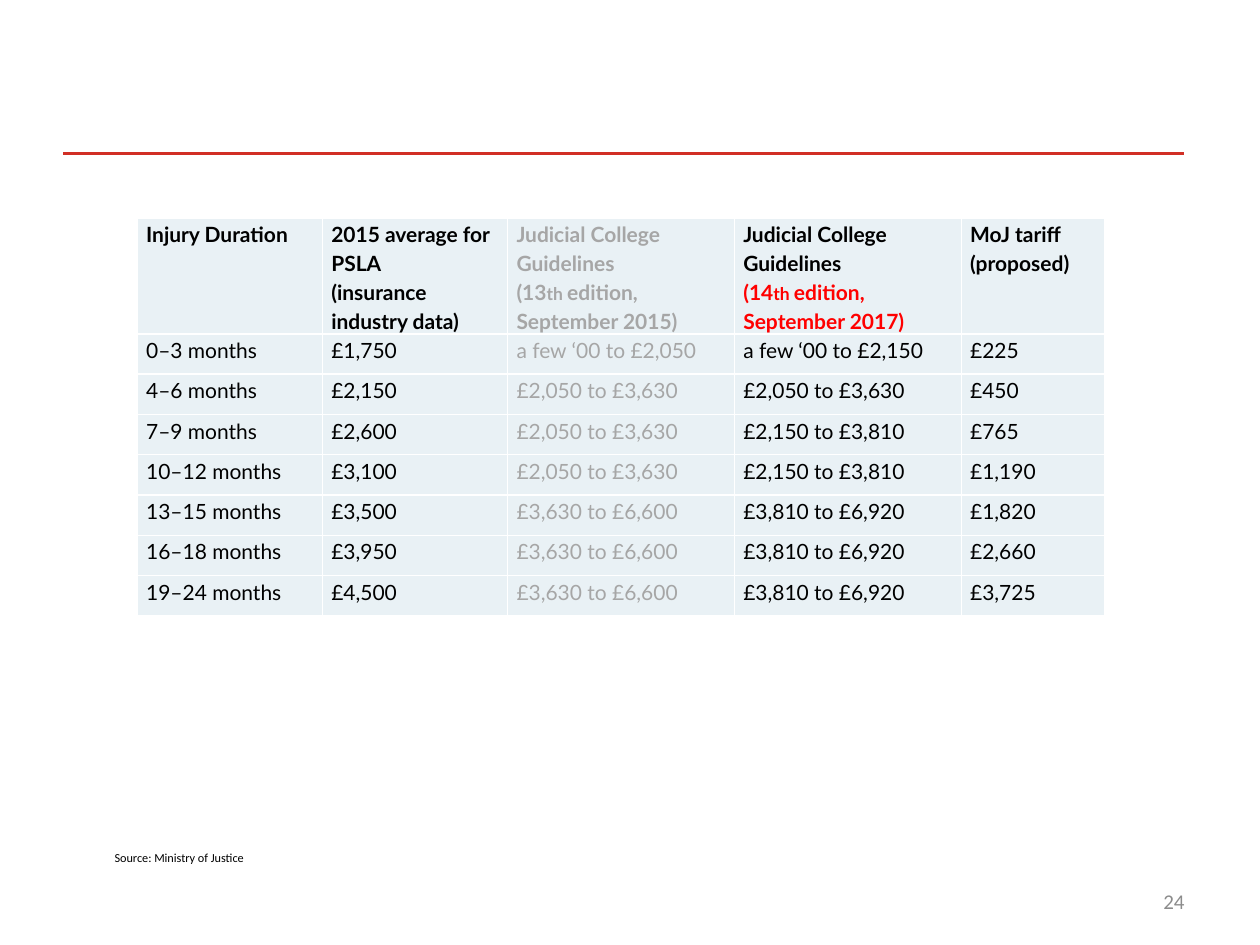
"""Build a slide comparing injury compensation by duration."""
from lxml.etree import SubElement
from pptx import Presentation
from pptx.dml.color import RGBColor
from pptx.enum.shapes import MSO_CONNECTOR
from pptx.enum.text import MSO_ANCHOR, PP_ALIGN
from pptx.oxml.ns import qn
from pptx.util import Inches, Pt

BLACK, GREY, RED = "000000", "A6A6A6", "FF0000"


def rgb(value):
    return RGBColor.from_string(value)


def add_run(p, text, color, **formats):
    r = p.add_run()
    r.text = text
    r.font.color.rgb = rgb(color)
    for name, value in formats.items():
        setattr(r.font, name, value)


prs = Presentation()
prs.slide_width, prs.slide_height = Inches(10), Inches(7.5)
s = prs.slides.add_slide(prs.slide_layouts[6])

rule = s.shapes.add_connector(
    MSO_CONNECTOR.STRAIGHT, Inches(0.5), Inches(1.22), Inches(9.4), Inches(1.22)
)
rule.line.color.rgb = rgb("D12F25")
rule.line.width = Pt(2)
SubElement(rule._element.spPr, qn("a:effectLst"))

sp = s.shapes.add_textbox(Inches(7.17), Inches(6.95), Inches(2.33), Inches(0.4))
tf = sp.text_frame
tf.word_wrap = True
tf.vertical_anchor = MSO_ANCHOR.MIDDLE
p = tf.paragraphs[0]
p.alignment = PP_ALIGN.RIGHT
add_run(p, "24", "8C8C8C", size=Pt(12), name="Calibri")

headers = [
    [["Injury Duration"]],
    [["2015 average for PSLA"], ["(insurance industry data)"]],
    [["Judicial College Guidelines"], ["(13", "th ", "edition, September 2015)"]],
    [["Judicial College Guidelines"], ["(14", "th ", "edition, September 2017)"]],
    [["MoJ tariff"], ["(proposed)"]],
]
data = [
    ["0–3 months", "£1,750", "a few ‘00 to £2,050", "a few ‘00 to £2,150", "£225"],
    ["4–6 months", "£2,150", "£2,050 to £3,630", "£2,050 to £3,630", "£450"],
    ["7–9 months", "£2,600", "£2,050 to £3,630", "£2,150 to £3,810", "£765"],
    ["10–12 months", "£3,100", "£2,050 to £3,630", "£2,150 to £3,810", "£1,190"],
    ["13–15 months", "£3,500", "£3,630 to £6,600", "£3,810 to £6,920", "£1,820"],
    ["16–18 months", "£3,950", "£3,630 to £6,600", "£3,810 to £6,920", "£2,660"],
    ["19–24 months", "£4,500", "£3,630 to £6,600", "£3,810 to £6,920", "£3,725"],
]
rows = [headers] + [[[[text]] for text in row] for row in data]
widths = [1.47, 1.47, 1.8, 1.8, 1.14]
margins = {
    "margin_left": Inches(0.07),
    "margin_right": Inches(0.07),
    "margin_top": 0,
    "margin_bottom": 0,
}

table = s.shapes.add_table(
    len(rows), len(widths), Inches(1.09), Inches(1.73), Inches(7.66), Inches(3.13)
).table
table.first_row = True
table.horz_banding = False
for col, width in zip(table.columns, widths):
    col.width = Inches(width)
for i, row in enumerate(rows):
    table.rows[i].height = Inches(0.32 if i else 0.69)
    for j, paragraphs in enumerate(row):
        cell = table.cell(i, j)
        for name, value in margins.items():
            setattr(cell, name, value)
        tcPr = cell._tc.get_or_add_tcPr()
        for side in ("lnL", "lnR", "lnT", "lnB"):
            ln = SubElement(tcPr, qn(f"a:{side}"), w=str(Pt(1)))
            SubElement(SubElement(ln, qn("a:solidFill")), qn("a:srgbClr"), val="FFFFFF")
        cell.fill.solid()
        cell.fill.fore_color.rgb = rgb("E9F1F5")
        tf = cell.text_frame
        for k, runs in enumerate(paragraphs):
            p = tf.add_paragraph() if k else tf.paragraphs[0]
            p.line_spacing = 1.15
            color = GREY if j == 2 else RED if j == 3 and k else BLACK
            for text in runs:
                size = Pt(10 if text == "th " else 12)
                add_run(p, text, color, size=size, name="Lato", bold=i == 0)

sp = s.shapes.add_textbox(Inches(0.91), Inches(6.75), Inches(1.4), Inches(0.12))
tf = sp.text_frame
tf.word_wrap = True
for name in margins:
    setattr(tf, name, 0)
add_run(tf.paragraphs[0], "Source: Ministry of Justice", BLACK, size=Pt(7), name="Calibri")

prs.save("out.pptx")
